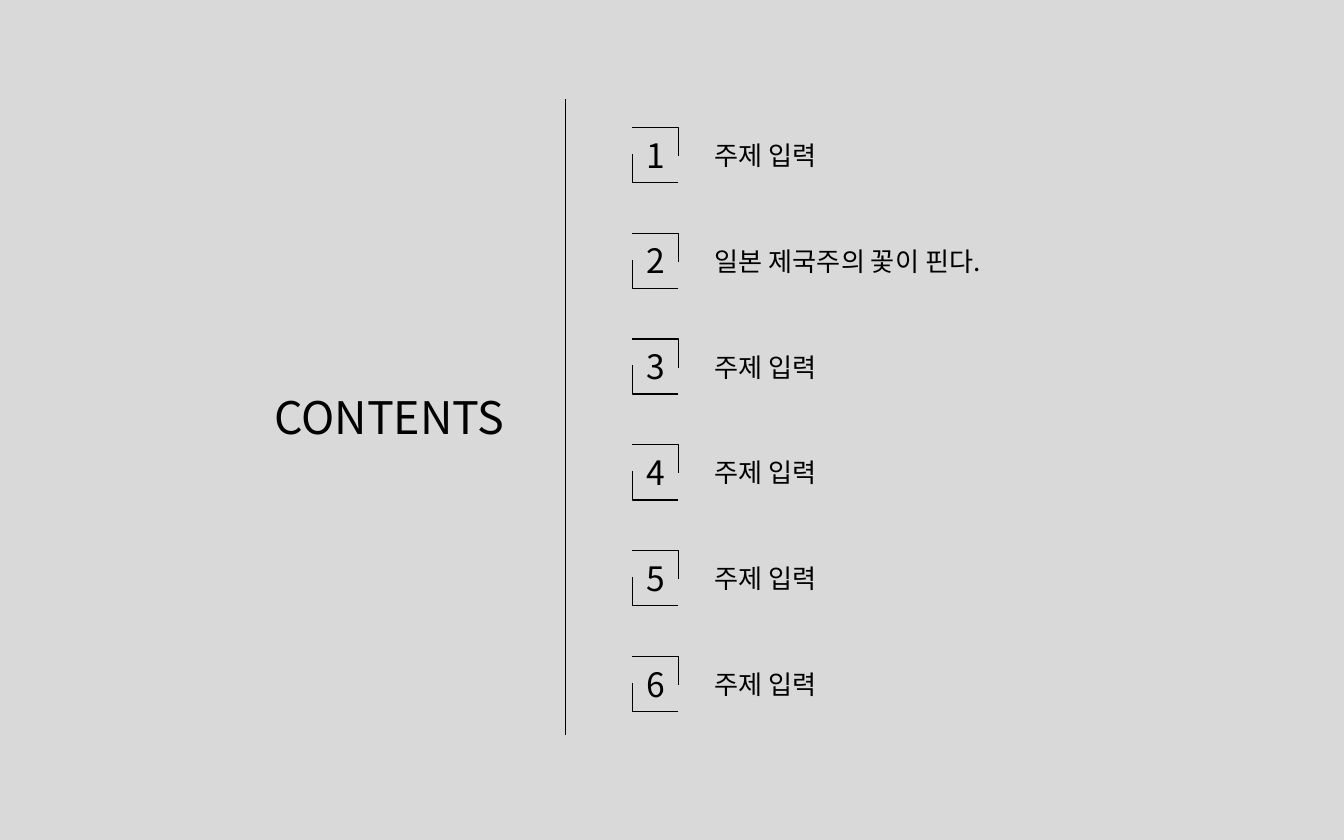
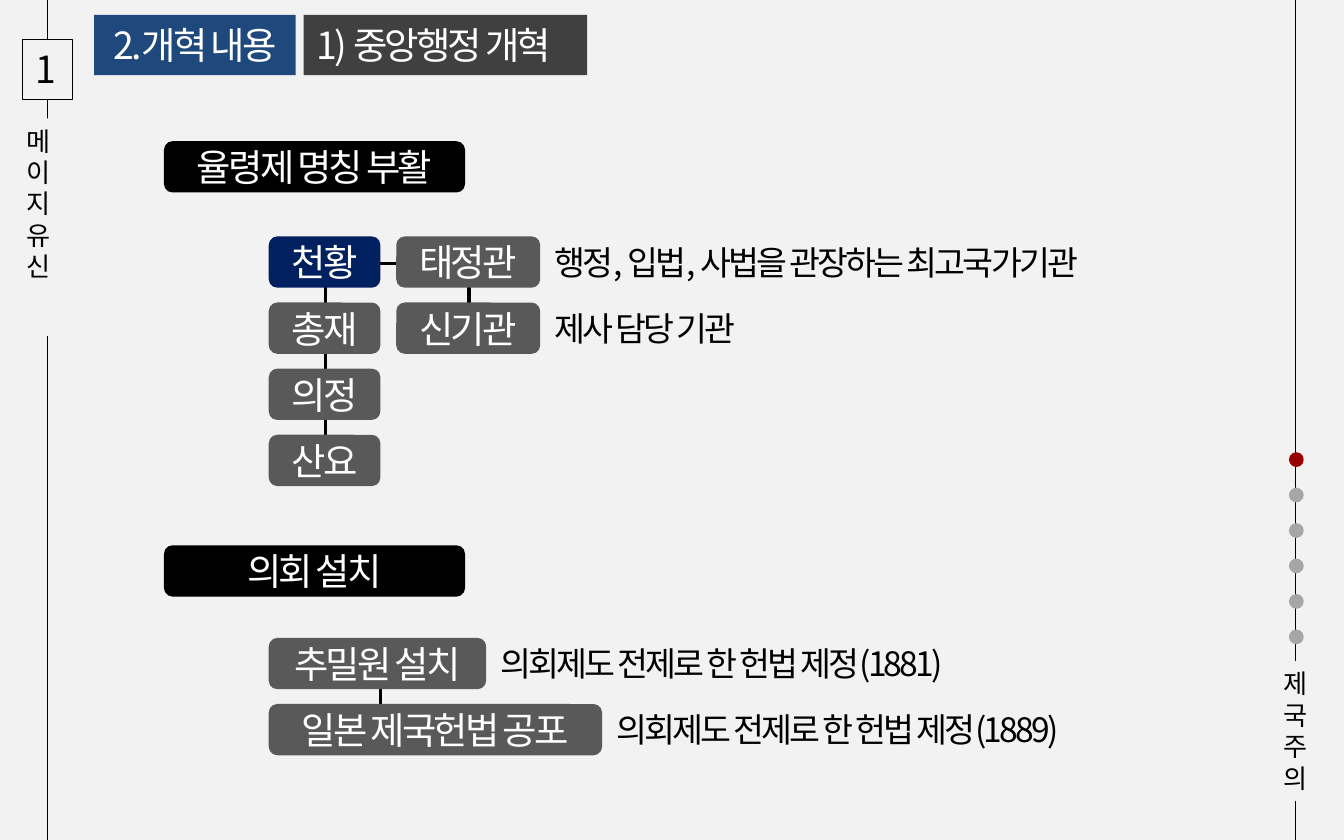
"""Build a contents slide and a slide on the Meiji administrative reforms."""
from lxml import etree
from pptx import Presentation
from pptx.dml.color import RGBColor
from pptx.enum.shapes import MSO_CONNECTOR, MSO_SHAPE
from pptx.enum.text import MSO_ANCHOR, MSO_AUTO_SIZE, PP_ALIGN
from pptx.oxml.ns import qn
from pptx.util import Cm, Pt

STRAIGHT = MSO_CONNECTOR.STRAIGHT
RECTANGLE, ROUNDED, OVAL = MSO_SHAPE.RECTANGLE, MSO_SHAPE.ROUNDED_RECTANGLE, MSO_SHAPE.OVAL
TOP, MIDDLE = MSO_ANCHOR.TOP, MSO_ANCHOR.MIDDLE
GROW, FIXED = MSO_AUTO_SIZE.SHAPE_TO_FIT_TEXT, MSO_AUTO_SIZE.NONE
LEFT, CENTER = PP_ALIGN.LEFT, PP_ALIGN.CENTER
FONT = "Noto Sans CJK KR"
WIDTH, HEIGHT = 25.4, 15.88
COLORS = {
    name: RGBColor.from_string(value)
    for name, value in {
        "black": "000000", "white": "FFFFFF", "silver": "D9D9D9", "paper": "F2F2F2",
        "blue": "1F497D", "navy": "002060", "charcoal": "404040", "gray": "595959",
        "red": "970303", "dot": "A6A6A6",
    }.items()
}


def write(shape, text, size, color="black", align=LEFT, tight=False):
    """Set the text; tight text is condensed, wrapped and vertically centred."""
    frame = shape.text_frame
    frame.text = text
    frame.word_wrap = tight
    frame.auto_size = FIXED if tight else GROW
    frame.vertical_anchor = MIDDLE if tight else TOP
    for paragraph in frame.paragraphs:
        paragraph.alignment = align
        for run in paragraph.runs:
            run.font.size = Pt(size)
            run.font.name = FONT
            run.font.color.rgb = COLORS[color]
            properties = run.font._element
            etree.SubElement(properties, qn("a:ea")).set("typeface", FONT)
            if tight:
                properties.set("spc", "-150")


def add_filled(slide, kind, box, fill):
    """Add a borderless preset shape; box is left, top, width, height in cm."""
    shape = slide.shapes.add_shape(kind, *map(Cm, box))
    shape.shadow.inherit = False
    shape.fill.solid()
    shape.fill.fore_color.rgb = COLORS[fill]
    shape.line.fill.background()
    return shape


presentation = Presentation()
presentation.slide_width, presentation.slide_height = Cm(WIDTH), Cm(HEIGHT)
title_only = presentation.slide_layouts[5]
contents = presentation.slides.add_slide(title_only)
reform = presentation.slides.add_slide(title_only)

for slide, background, box in (
    (contents, "silver", (4.93, 7.24, 5.03, 1.27)),
    (reform, "paper", (1.78, 0.28, 3.81, 1.14)),
):
    slide.background.fill.solid()
    slide.background.fill.fore_color.rgb = COLORS[background]
    title = slide.shapes.title
    title.left, title.top, title.width, title.height = map(Cm, box)

for slide, ends, weight in (
    (contents, (10.69, 1.88, 10.69, 13.89), 0.5),
    (reform, (7.19, 12.14, 7.19, 13.92), 2),
    (reform, (8.86, 4.85, 8.86, 6.2), 2),
    (reform, (6.12, 4.98, 9.83, 4.98), 2),
    (reform, (6.15, 4.85, 6.15, 9.09), 2),
    (reform, (0.89, 0, 0.89, HEIGHT), 0.5),
    (reform, (24.49, 0, 24.49, HEIGHT), 0.5),
):
    connector = slide.shapes.add_connector(STRAIGHT, *map(Cm, ends))
    connector.line.color.rgb = COLORS["black"]
    connector.line.width = Pt(weight)
    etree.SubElement(connector._element.spPr, qn("a:effectLst"))

write(contents.shapes.title, "CONTENTS", 24)
topics = ["주제 입력", "일본 제국주의 꽃이 핀다.", "주제 입력", "주제 입력", "주제 입력", "주제 입력"]
bracket_left, bracket_right = 11.95, 12.82
for index, topic in enumerate(topics):
    top = 2.41 + 2 * index
    bottom = top + 1.04
    for corner in (
        ((bracket_left, top), (bracket_right, top), (bracket_right, top + 0.54)),
        ((bracket_right, bottom), (bracket_left, bottom), (bracket_left, bottom - 0.54)),
    ):
        start, *others = [(Cm(x), Cm(y)) for x, y in corner]
        builder = contents.shapes.build_freeform(*start)
        builder.add_line_segments(others, close=False)
        bracket = builder.convert_to_shape()
        bracket.shadow.inherit = False
        bracket.fill.background()
        bracket.line.color.rgb = COLORS["black"]
        bracket.line.width = Pt(0.75)
    for text, size, box in (
        (str(index + 1), 18, (11.96, top + 0.01, 0.86, 1.02)),
        (topic, 14, (13.26, top + 0.1, 6.12 if index == 1 else 2.69, 0.86)),
    ):
        write(contents.shapes.add_textbox(*map(Cm, box)), text, size)

title = reform.shapes.title
title.fill.solid()
title.fill.fore_color.rgb = COLORS["blue"]
write(title, "2.개혁 내용", 20, "white", CENTER, tight=True)
subtitle = add_filled(reform, RECTANGLE, (5.74, 0.28, 5.36, 1.14), "charcoal")
write(subtitle, "1) 중앙행정 개혁", 20, "white", tight=True)

number = add_filled(reform, RECTANGLE, (0.43, 0.74, 0.94, 1.14), "paper")
number.line.color.rgb = COLORS["black"]
number.line.width = Pt(0.5)
write(number, "1", 20)
era = add_filled(reform, RECTANGLE, (0.25, 2.24, 1.3, 4.11), "paper")
write(era, "메이지유신", 14)
era.text_frame._txBody.bodyPr.set("vert", "wordArtVertRtl")
theme = add_filled(reform, RECTANGLE, (24, 12.5, 1.02, 2.64), "paper")
write(theme, "\n".join("제국주의"), 14)

for index in range(6):
    color = "dot" if index else "red"
    add_filled(reform, OVAL, (24.36, 8.55 + 0.67 * index, 0.28, 0.28), color)

for left, top, width, fill, label, note in (
    (3.1, 2.67, 5.69, "black", "율령제 명칭 부활", ""),
    (5.08, 4.47, 2.11, "navy", "천황", ""),
    (5.08, 5.72, 2.11, "gray", "총재", ""),
    (5.08, 6.97, 2.11, "gray", "의정", ""),
    (5.08, 8.22, 2.11, "gray", "산요", ""),
    (7.49, 4.47, 2.72, "gray", "태정관", "행정, 입법, 사법을 관장하는 최고국가기관"),
    (7.49, 5.72, 2.72, "gray", "신기관", "제사 담당 기관"),
    (3.1, 10.31, 5.69, "black", "의회 설치", ""),
    (5.08, 12.06, 4.11, "gray", "추밀원 설치", "의회제도 전제로 한 헌법 제정(1881)"),
    (5.08, 13.31, 6.3, "gray", "일본 제국헌법 공포", "의회제도 전제로 한 헌법 제정(1889)"),
):
    office = add_filled(reform, ROUNDED, (left, top, width, 0.97), fill)
    write(office, label, 20, "white", CENTER, tight=True)
    if note:
        note_width = 4.9 if len(note) < 10 else 11.35
        box = (left + width + 0.02, top - 0.09, note_width, 1.14)
        write(reform.shapes.add_textbox(*map(Cm, box)), note, 18, tight=True)

presentation.save("out.pptx")
